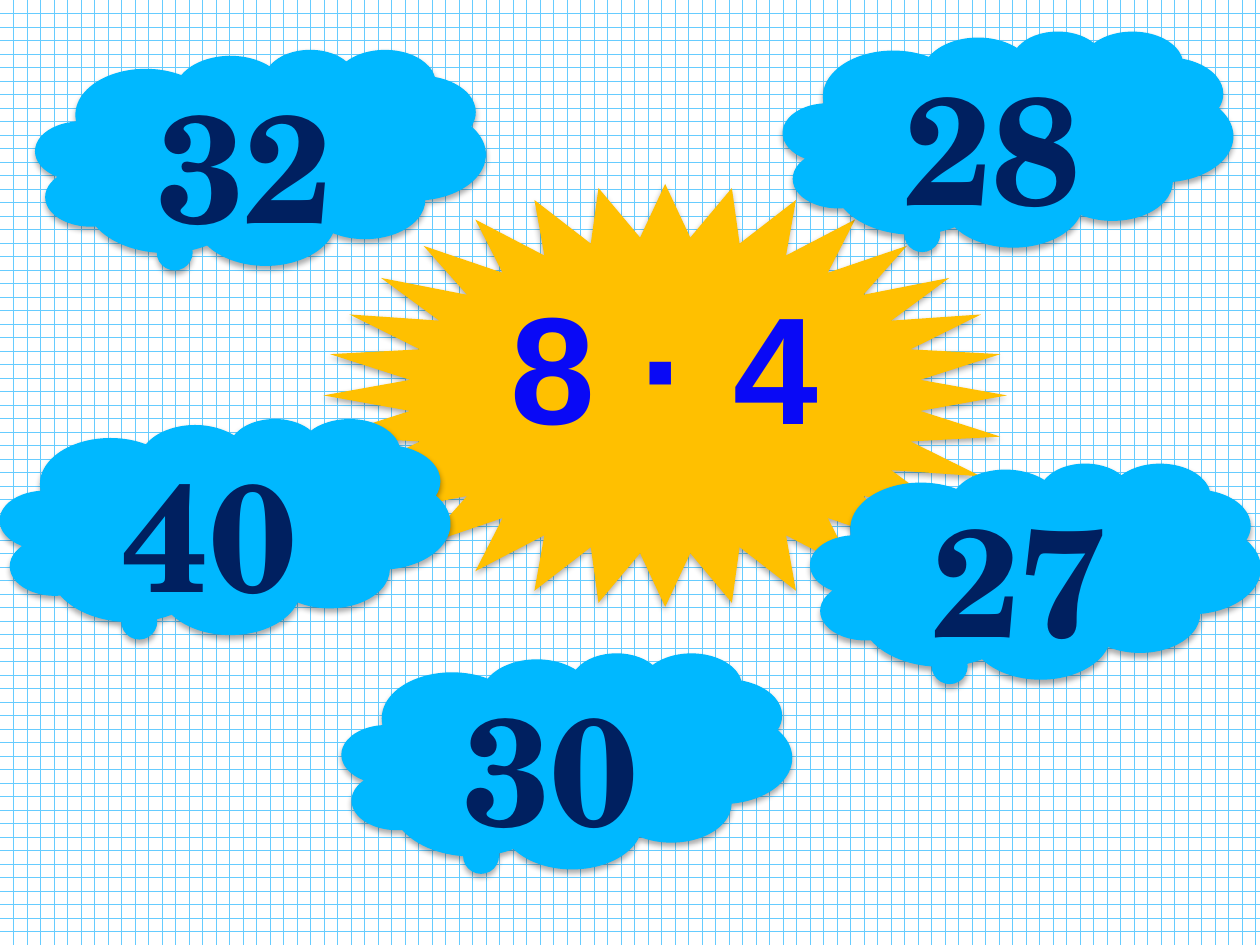
from dataclasses import dataclass

from lxml import etree
from pptx import Presentation
from pptx.dml.color import RGBColor
from pptx.enum.dml import MSO_PATTERN
from pptx.enum.shapes import MSO_SHAPE
from pptx.enum.text import MSO_ANCHOR, PP_ALIGN
from pptx.oxml import parse_xml
from pptx.oxml.ns import nsdecls, qn
from pptx.util import Inches, Pt


@dataclass(frozen=True)
class Theme:
    grid: str = "66CCFF"
    paper: str = "FFFFFF"
    sun: str = "FFC000"
    cloud: str = "00B8FF"
    answer: str = "002060"
    task_top: str = "0909F6"
    task_bottom: str = "0101B3"
    task_font: str = "Arial"
    answer_font: str = "TeX Gyre Schola"
    size: int = 96
    line_spacing: float = 0.93


THEME = Theme()
CM_PER_INCH = 2.54
SLIDE_CM = (28, 21)
CLOUD_SIZE = (3.94, 1.89)
ANSWERS = [
    ("32", 0.31, 0.43),
    ("28", 6.85, 0.27),
    ("40", 0, 3.66),
    ("27", 7.09, 4.05),
    ("30", 2.99, 5.71),
]


def color(value):
    return RGBColor.from_string(value)


def add_shadow(s):
    s.shadow.inherit = False
    effects = s._element.spPr.find(qn("a:effectLst"))
    shadow = etree.SubElement(
        effects, qn("a:outerShdw"), blurRad=str(Pt(3.5)), dist=str(Pt(2.2)),
        dir="5400000", algn="ctr", rotWithShape="0")
    black = etree.SubElement(shadow, qn("a:srgbClr"), val="000000")
    etree.SubElement(black, qn("a:alpha"), val="32000")


def add_label_shape(slide, kind, box, fill, text, font):
    """Add a filled shape with one big bold label; return the shape and its run."""
    s = slide.shapes.add_shape(kind, *(Inches(v) for v in box))
    s.fill.solid()
    s.fill.fore_color.rgb = color(fill)
    s.line.fill.background()
    add_shadow(s)
    tf = s.text_frame
    tf.word_wrap = True
    tf.vertical_anchor = MSO_ANCHOR.TOP
    p = tf.paragraphs[0]
    p.alignment = PP_ALIGN.CENTER
    p.line_spacing = THEME.line_spacing
    r = p.add_run()
    r.text = text
    r.font.name = font
    r.font.size = Pt(THEME.size)
    r.font.bold = True
    return s, r


def add_sun(slide, box, task):
    s, r = add_label_shape(slide, MSO_SHAPE.STAR_32_POINT, box,
                           THEME.sun, task, THEME.task_font)
    rPr = r.font._element
    rPr.set("spc", "50")
    rPr.insert(0, parse_xml(
        f'<a:gradFill {nsdecls("a")}><a:gsLst>'
        f'<a:gs pos="25000"><a:srgbClr val="{THEME.task_top}"/></a:gs>'
        f'<a:gs pos="100000"><a:srgbClr val="{THEME.task_bottom}"/></a:gs>'
        '</a:gsLst><a:lin ang="5400000" scaled="0"/></a:gradFill>'))


def add_cloud(slide, box, answer):
    s, r = add_label_shape(slide, MSO_SHAPE.CLOUD_CALLOUT, box,
                           THEME.cloud, answer, THEME.answer_font)
    s.adjustments[0] = -0.157
    s.adjustments[1] = 0.363
    r.font.color.rgb = color(THEME.answer)


def add_squared_paper(slide):
    fill = slide.background.fill
    fill.patterned()
    fill.pattern = MSO_PATTERN.HORIZONTAL_BRICK
    fill.fore_color.rgb = color(THEME.grid)
    fill.back_color.rgb = color(THEME.paper)


def main():
    prs = Presentation()
    prs.slide_width, prs.slide_height = (
        Inches(side / CM_PER_INCH) for side in SLIDE_CM)
    slide = prs.slides.add_slide(prs.slide_layouts[6])
    add_squared_paper(slide)
    add_sun(slide, (2.83, 1.61, 5.98, 3.7), "8 · 4 ")
    for answer, left, top in ANSWERS:
        add_cloud(slide, (left, top, *CLOUD_SIZE), answer)
    prs.save("out.pptx")


if __name__ == "__main__":
    main()
